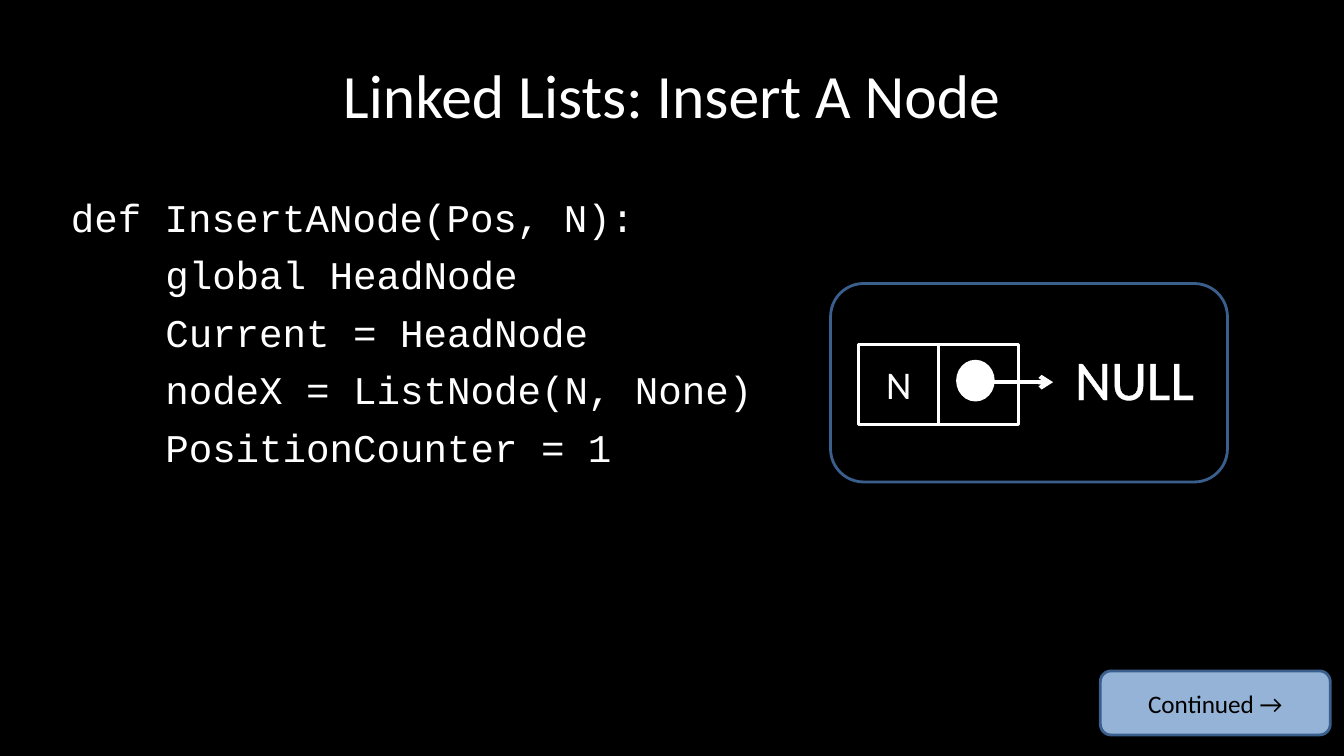
import pptx
import pptx.util
import pptx.dml.color
import pptx.enum.shapes
import pptx.enum.text
import pptx.oxml
from pptx.oxml.ns import nsdecls, qn

Color = pptx.dml.color.RGBColor
Shape = pptx.enum.shapes.MSO_SHAPE
Align = pptx.enum.text.PP_ALIGN
Anchor = pptx.enum.text.MSO_ANCHOR
Pt = pptx.util.Pt

BLACK = Color(0x00, 0x00, 0x00)
WHITE = Color(0xFF, 0xFF, 0xFF)
BLUE = Color(0x3A, 0x5F, 0x8C)
PALE = Color(0x95, 0xB3, 0xD7)

PX = 9525
INDENT = 90
CELL = 76
CODE = [
    (0, "def InsertANode(Pos, N):"),
    (1, "global HeadNode"),
    (1, "Current = HeadNode"),
    (1, "nodeX = ListNode(N, None)"),
    (1, "PositionCounter = 1"),
]


def emu(*sizes):
    return [size * PX for size in sizes]


def style(para, size, color=WHITE, name="Calibri", align=Align.CENTER):
    para.alignment = align
    para.font.size = Pt(size)
    para.font.name = name
    para.font.color.rgb = color


def add_title(slide, text, box):
    title = slide.shapes.title
    title.left, title.top, title.width, title.height = emu(*box)
    title.text_frame.text = text
    title.text_frame.vertical_anchor = Anchor.MIDDLE
    style(title.text_frame.paragraphs[0], 44)


def add_code(slide, lines, box):
    frame = slide.shapes.add_textbox(*emu(*box)).text_frame
    frame.word_wrap = True
    for i, (level, text) in enumerate(lines):
        para = frame.add_paragraph() if i else frame.paragraphs[0]
        para.text = text
        para.space_before = Pt(7.5)
        style(para, 28, name="Courier New", align=Align.LEFT)
        props = para._p.get_or_add_pPr()
        props.set("marL", str(level * INDENT * PX))
        props.set("indent", "0")


def add_box(slide, kind, box, line=WHITE, fill=None):
    shape = slide.shapes.add_shape(kind, *emu(*box))
    shape.shadow.inherit = False
    if fill is None:
        shape.fill.background()
    else:
        shape.fill.solid()
        shape.fill.fore_color.rgb = fill
    shape.line.color.rgb = line
    shape.line.width = Pt(2)
    return shape


def put_text(shape, text, size, color):
    frame = shape.text_frame
    frame.text = text
    frame.vertical_anchor = Anchor.MIDDLE
    style(frame.paragraphs[0], size, color)


def add_arrow(slide, start, end):
    arrow = slide.shapes.add_connector(
        pptx.enum.shapes.MSO_CONNECTOR.STRAIGHT, *emu(*start, *end))
    arrow.line.color.rgb = WHITE
    arrow.line.width = Pt(3)
    props = arrow._element.spPr
    props.find(qn("a:ln")).append(
        pptx.oxml.parse_xml(f'<a:tailEnd {nsdecls("a")} type="arrow"/>'))
    props.append(pptx.oxml.parse_xml(f'<a:effectLst {nsdecls("a")}/>'))


def add_label(slide, text, box):
    """Add large text whose letters have a white outline."""
    frame = slide.shapes.add_textbox(*emu(*box)).text_frame
    frame.word_wrap = False
    frame.text = text
    para = frame.paragraphs[0]
    style(para, 40)
    edge = pptx.oxml.parse_xml(
        f'<a:ln {nsdecls("a")} w="{Pt(1.4)}"><a:solidFill>'
        f'<a:srgbClr val="{WHITE}"/></a:solidFill></a:ln>')
    para.runs[0]._r.get_or_add_rPr().insert(0, edge)


def add_node(slide, left, top, value):
    """Draw a list node: a value cell and a link cell that points on."""
    data = add_box(slide, Shape.RECTANGLE, (left, top, CELL, CELL))
    put_text(data, value, 28, WHITE)
    add_box(slide, Shape.OVAL, (left + 94, top + 16, 34, 37), fill=WHITE)
    add_arrow(slide, (left + 128, top + 36), (left + 185, top + 36))
    add_box(slide, Shape.RECTANGLE, (left + CELL, top, CELL, CELL))


def main():
    deck = pptx.Presentation()
    deck.slide_width, deck.slide_height = emu(1280, 720)
    slide = deck.slides.add_slide(deck.slide_layouts.get_by_name("Title Only"))
    slide.background.fill.solid()
    slide.background.fill.fore_color.rgb = BLACK

    add_title(slide, "Linked Lists: Insert A Node", (64, 29, 1152, 120))
    add_code(slide, CODE, (58, 179, 1089, 499))
    button = add_box(slide, Shape.ROUNDED_RECTANGLE, (1048, 639, 219, 61),
                     BLUE, PALE)
    put_text(button, "Continued →", 18, BLACK)
    add_node(slide, 818, 328, "N")
    add_label(slide, "NULL", (1013, 323, 135, 74))
    add_box(slide, Shape.ROUNDED_RECTANGLE, (791, 270, 378, 189), BLUE)
    deck.save("out.pptx")


if __name__ == "__main__":
    main()
